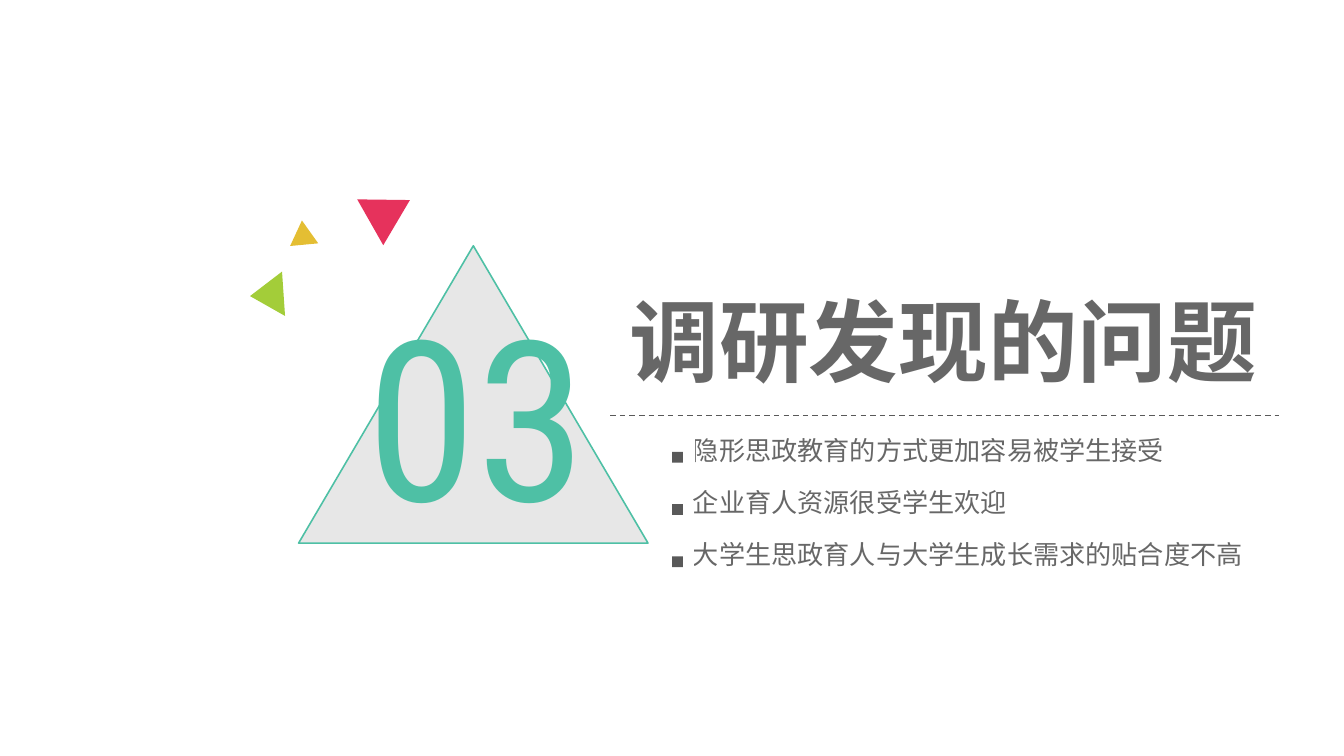
from pptx import Presentation
from pptx.dml.color import RGBColor
from pptx.enum.dml import MSO_LINE
from pptx.enum.shapes import MSO_CONNECTOR, MSO_SHAPE
from pptx.enum.text import MSO_ANCHOR, MSO_AUTO_SIZE
from pptx.oxml.ns import qn
from pptx.util import Pt
from lxml import etree

GREY, TEAL = "595959", "4EC0A5"
CJK, CONDENSED = "Noto Sans CJK SC", "Roboto Condensed"


def set_color(fill, color, alpha=100):
    fill.solid()
    fill.fore_color.rgb = RGBColor.from_string(color)
    if alpha < 100:
        clr = fill._xPr.find(qn("a:solidFill"))[0]
        etree.SubElement(clr, qn("a:alpha"), val=str(alpha * 1000))


def add_shape(s, kind, x, y, w, h, color, alpha=100, rotation=0, outline=None):
    sp = s.shapes.add_shape(kind, Pt(x), Pt(y), Pt(w), Pt(h))
    sp.shadow.inherit = False
    sp.rotation = rotation
    set_color(sp.fill, color, alpha)
    if outline:
        set_color(sp.line.fill, outline)
        sp.line.width = Pt(0.85)
    else:
        sp.line.fill.background()


def add_text(s, text, x, y, w, h, size, color, font=CJK, alpha=100, bold=False):
    tf = s.shapes.add_textbox(Pt(x), Pt(y), Pt(w), Pt(h)).text_frame
    tf.word_wrap = False
    tf.auto_size = MSO_AUTO_SIZE.SHAPE_TO_FIT_TEXT
    tf.vertical_anchor = MSO_ANCHOR.TOP
    tf.margin_left = tf.margin_right = Pt(5.4)
    tf.margin_top = tf.margin_bottom = Pt(2.7)
    r = tf.paragraphs[0].add_run()
    r.text = text
    r.font.size = Pt(size)
    r.font.bold = bold
    set_color(r.font.fill, color, alpha)
    r.font.name = font
    etree.SubElement(r.font._element, qn("a:ea"), typeface=font)


def add_dashed_line(s, x1, x2, y):
    line = s.shapes.add_connector(MSO_CONNECTOR.STRAIGHT, Pt(x1), Pt(y), Pt(x2), Pt(y))
    set_color(line.line.fill, GREY)
    line.line.width = Pt(0.75)
    line.line.dash_style = MSO_LINE.DASH
    etree.SubElement(line._element.spPr, qn("a:effectLst"))


def add_bullet(s, text, y, w):
    add_shape(s, MSO_SHAPE.RECTANGLE, 360, y + 12.2, 5.8, 5.8, GREY)
    add_text(s, text, 365.8, y, w, 24.5, 14, GREY, alpha=91)


def main():
    prs = Presentation()
    prs.slide_width, prs.slide_height = Pt(720), Pt(405)
    s = prs.slides.add_slide(prs.slide_layouts[6])

    # Section number on the large triangle
    add_shape(s, MSO_SHAPE.ISOSCELES_TRIANGLE, 160, 131.7, 187.2, 159.3, GREY,
              alpha=14, outline=TEAL)
    add_text(s, "03", 190.8, 146.2, 144, 152.6, 120, TEAL, font=CONDENSED)

    # Title and rule
    add_text(s, "调研发现的问题", 331.9, 150.5, 353.5, 65.5, 48, GREY, alpha=91, bold=True)
    add_dashed_line(s, 326.9, 685.4, 222.5)

    # Scattered small triangles
    for x, y, w, h, rotation, color in [
        (187.9, 100.8, 28.1, 24.5, 300.6, "E6325C"),
        (154.8, 118.1, 15.1, 13, 354.7, "E4BE33"),
        (131, 149, 23.8, 18, 266.1, "A3CD39"),
    ]:
        add_shape(s, MSO_SHAPE.ISOSCELES_TRIANGLE, x, y, w, h, color, rotation=rotation)

    # Findings
    findings = [
        ("隐形思政教育的方式更加容易被学生接受", 269.3),
        ("企业育人资源很受学生欢迎", 184.3),
        ("大学生思政育人与大学生成长需求的贴合度不高", 311.8),
    ]
    for i, (text, w) in enumerate(findings):
        add_bullet(s, text, 229.9 + 28 * i, w)

    prs.save("out.pptx")


if __name__ == "__main__":
    main()
